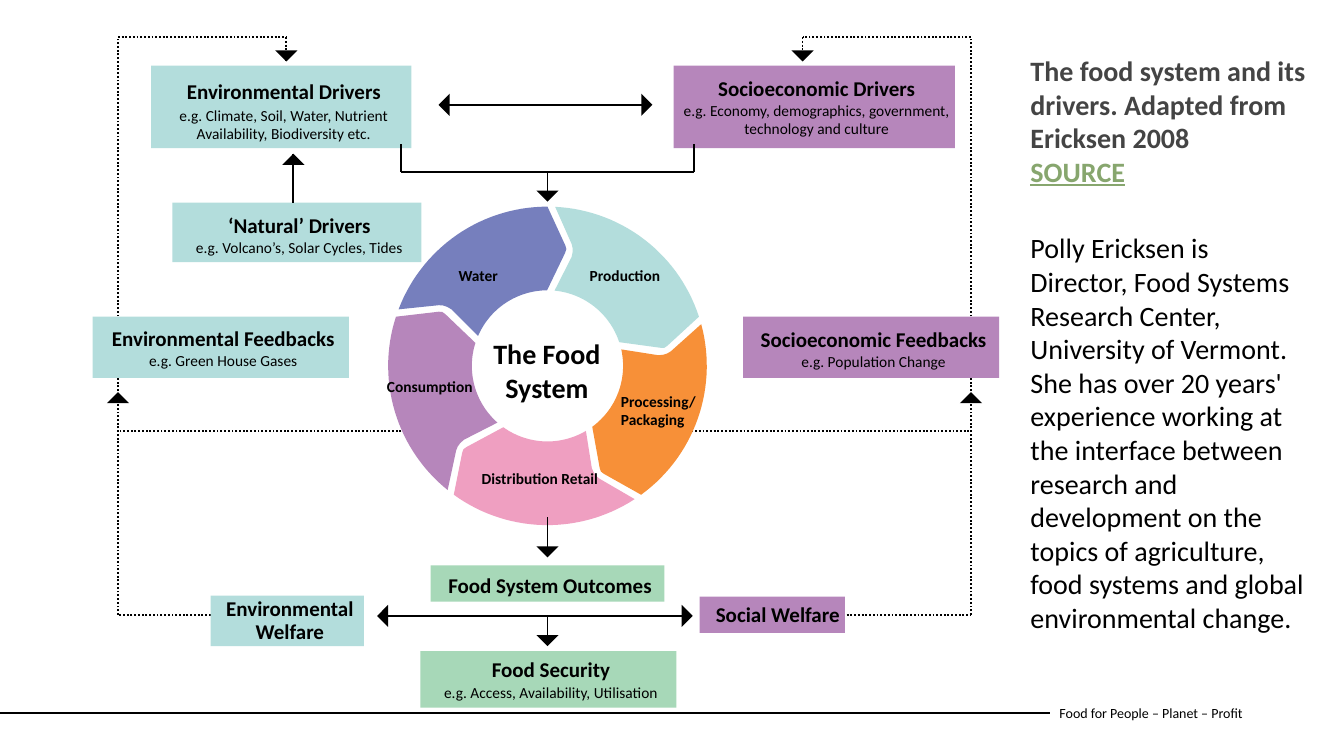
from itertools import pairwise
from math import cos, radians, sin

from lxml.etree import SubElement
from pptx import Presentation
from pptx.dml.color import RGBColor
from pptx.enum.dml import MSO_LINE
from pptx.enum.shapes import MSO_CONNECTOR, MSO_SHAPE
from pptx.enum.text import MSO_ANCHOR, MSO_AUTO_SIZE, PP_ALIGN
from pptx.oxml.ns import qn
from pptx.util import Inches, Pt

COLORS = {
    "black": "000000",
    "heading": "444444",
    "source": "87A66E",
    "teal": "B3DDDC",
    "purple": "B686BB",
    "green": "A7D8B8",
    "orange": "F79038",
    "pink": "EF9FC1",
    "blue": "767FBD",
}
WHEEL_X, WHEEL_Y = 5.43, 3.63
OUTER, INNER = 1.58, 0.75
MIRROR = 10.8
TURNS = {"up": 0, "right": 90, "down": 180, "left": 270}

DRIVER_BOXES = [
    (1.5, 0.65, 2.58, 0.82, "teal", 0.13, "Environmental Drivers",
     "e.g. Climate, Soil, Water, Nutrient Availability, Biodiversity etc.", 1.5),
    (6.68, 0.65, 2.79, 0.82, "purple", 0.1, "Socioeconomic Drivers",
     "e.g. Economy, demographics, government, technology and culture", 0),
    (1.71, 2.01, 2.47, 0.59, "teal", 0.1, "‘Natural’ Drivers",
     "e.g. Volcano’s, Solar Cycles, Tides", 0),
    (0.92, 3.14, 2.54, 0.61, "teal", 0.09, "Environmental Feedbacks",
     "e.g. Green House Gases", 0),
    (7.37, 3.14, 2.54, 0.61, "purple", 0.1, "Socioeconomic Feedbacks",
     "e.g. Population Change", 0),
    (4.27, 5.61, 2.32, 0.36, "green", 0.07, "Food System Outcomes", None, 0),
    (4.17, 6.46, 2.54, 0.56, "green", 0.05, "Food Security",
     "e.g. Access, Availability, Utilisation", 1),
]
WHEEL_LABELS = [
    (5.75, 2.59, 0.91, 0.29, ["Production"]),
    (6.06, 3.84, 0.95, 0.66, ["Processing/", "Packaging"]),
    (4.68, 4.61, 1.37, 0.47, ["Distribution Retail"]),
    (3.74, 3.69, 1.06, 0.29, ["Consumption"]),
    (4.45, 2.59, 0.6, 0.29, ["Water"]),
]


def rgb(name):
    return RGBColor.from_string(COLORS[name])


def write(frame, text, size=15, bold=False, underline=False, color="black",
          align=PP_ALIGN.LEFT, before=0, spacing=None):
    paragraph = frame.add_paragraph() if frame.text else frame.paragraphs[0]
    paragraph.alignment = align
    paragraph.space_before = Pt(before)
    paragraph.line_spacing = spacing
    run = paragraph.add_run()
    run.text = text
    font = run.font
    font.name, font.size = "Calibri", Pt(size)
    font.bold, font.underline = bold, underline
    font.color.rgb = rgb(color)
    return paragraph


def paint(shape, color):
    shape.shadow.inherit = False
    shape.fill.solid()
    shape.fill.fore_color.rgb = rgb(color)
    shape.line.fill.background()


def box(slide, left, top, width, height, color, inset_top, inset_left=0.05):
    panel = slide.shapes.add_shape(
        MSO_SHAPE.RECTANGLE, Inches(left), Inches(top), Inches(width), Inches(height))
    paint(panel, color)
    frame = panel.text_frame
    frame.word_wrap = True
    frame.vertical_anchor = MSO_ANCHOR.TOP
    frame.margin_left, frame.margin_right = Inches(inset_left), 0
    frame.margin_top, frame.margin_bottom = Inches(inset_top), 0
    return frame


def label(slide, left, top, width, height, lines, **style):
    frame = slide.shapes.add_textbox(
        Inches(left), Inches(top), Inches(width), Inches(height)).text_frame
    frame.word_wrap = False
    for line in lines:
        write(frame, line, **style)
    return frame


def route(slide, *points, dotted=False, weight=1.32):
    for start, end in pairwise(points):
        stroke = slide.shapes.add_connector(
            MSO_CONNECTOR.STRAIGHT, *(Inches(v) for v in start + end))
        stroke.line.color.rgb = rgb("black")
        stroke.line.width = Pt(weight)
        if dotted:
            stroke.line.dash_style = MSO_LINE.ROUND_DOT
        SubElement(stroke._element.spPr, qn("a:effectLst"))


def arrowhead(slide, x, y, direction):
    head = slide.shapes.add_shape(
        MSO_SHAPE.ISOSCELES_TRIANGLE, Inches(x - 0.11), Inches(y - 0.055),
        Inches(0.22), Inches(0.11))
    head.rotation = TURNS[direction]
    paint(head, "black")


def arc(radius, start, end, steps=30):
    angles = [radians(start + (end - start) * i / steps) for i in range(steps + 1)]
    return [(radius * sin(a), -radius * cos(a)) for a in angles]


def segment(slide, index, color):
    notch = [(0.24, -1.21), (0.25, -1.17), (0.25, -1.13), (0.24, -1.08)]
    tip = [(1.12, -0.18), (1.16, -0.18), (1.19, -0.2)]
    outline = notch + arc(INNER, 5.4, 71.7) + tip + arc(OUTER, 72, 2.8)
    turn = radians(72 * index)
    points = [
        (Inches(WHEEL_X + x * cos(turn) - y * sin(turn)),
         Inches(WHEEL_Y + x * sin(turn) + y * cos(turn)))
        for x, y in outline]
    builder = slide.shapes.build_freeform(*points[0])
    builder.add_line_segments(points[1:], close=True)
    paint(builder.convert_to_shape(), color)


def feedback_loops(slide):
    for side, welfare_edge in ((lambda x: x, 2.09), (lambda x: MIRROR - x, 8.25)):
        outer, driver = side(1.17), side(2.84)
        route(slide, (welfare_edge, 6.1), (outer, 6.1), (outer, 0.37),
              (driver, 0.37), (driver, 0.6), dotted=True)
        route(slide, (side(3.98), 4.28), (outer, 4.28), dotted=True)
        arrowhead(slide, outer, 3.945, "up")
        arrowhead(slide, driver, 0.555, "down")


def wheel(slide):
    for index, color in enumerate(("teal", "orange", "pink", "purple", "blue")):
        segment(slide, index, color)
    label(slide, 4.79, 3.29, 1.27, 1.11, ["The Food", "System"],
          size=20, bold=True, align=PP_ALIGN.CENTER)
    for left, top, width, height, lines in WHEEL_LABELS:
        label(slide, left, top, width, height, lines, size=11, bold=True)


def boxes(slide):
    for *panel, heading, example, gap in DRIVER_BOXES:
        frame = box(slide, *panel)
        write(frame, heading, bold=True, align=PP_ALIGN.CENTER)
        if example:
            write(frame, example, size=11, align=PP_ALIGN.CENTER, before=gap)
    environment = box(slide, 2.09, 5.91, 1.52, 0.5, "teal", 0.03)
    write(environment, "Environmental Welfare", bold=True,
          align=PP_ALIGN.CENTER, spacing=Pt(16))
    social = box(slide, 6.94, 5.92, 1.44, 0.36, "purple", 0.05, inset_left=0.16)
    social.word_wrap = False
    write(social, "Social Welfare", bold=True)


def arrows(slide):
    for start, tip in ((1.71, 2), (5.13, 5.53), (6.11, 6.41)):
        route(slide, (WHEEL_X, start), (WHEEL_X, tip - 0.01))
        arrowhead(slide, WHEEL_X, tip - 0.055, "down")
    for left, right, y in ((4.35, 6.47, 1.04), (3.74, 6.87, 6.11)):
        route(slide, (left + 0.1, y), (right - 0.1, y))
        arrowhead(slide, left + 0.055, y, "left")
        arrowhead(slide, right - 0.055, y, "right")
    route(slide, (3.98, 1.43), (3.98, 1.71), (6.88, 1.71), (6.88, 1.43))
    route(slide, (2.91, 2.01), (2.91, 1.53))
    arrowhead(slide, 2.91, 1.58, "up")


def place(placeholder, top, height):
    placeholder.left, placeholder.top = Inches(10.12), Inches(top)
    placeholder.width, placeholder.height = Inches(2.97), Inches(height)
    frame = placeholder.text_frame
    frame.vertical_anchor = MSO_ANCHOR.TOP
    frame.auto_size = MSO_AUTO_SIZE.NONE
    frame.word_wrap = True
    return frame


def commentary(slide):
    heading = place(slide.shapes.title, 0.48, 1.5)
    write(heading, "The food system and its drivers. Adapted from Ericksen 2008",
          size=20, bold=True, color="heading")
    write(heading, "SOURCE", size=20, bold=True, underline=True, color="source")
    biography = write(
        place(slide.placeholders[1], 2.24, 4.13),
        "Polly Ericksen is Director, Food Systems Research Center, University of "
        "Vermont. She has over 20 years' experience working at the interface between "
        "research and development on the topics of agriculture, food systems and "
        "global environmental change.", size=20)
    properties = biography._p.get_or_add_pPr()
    properties.set("marL", "0")
    properties.set("indent", "0")
    SubElement(properties, qn("a:buNone"))


def main():
    presentation = Presentation()
    presentation.slide_width, presentation.slide_height = Inches(13.33), Inches(7.5)
    slide = presentation.slides.add_slide(presentation.slide_layouts[1])
    commentary(slide)
    footer = label(slide, 10.41, 6.87, 2.73, 0.4,
                   ["Food for People – Planet – Profit"], size=10)
    footer.vertical_anchor = MSO_ANCHOR.MIDDLE
    route(slide, (0, 7.07), (10.41, 7.07), weight=1.5)
    feedback_loops(slide)
    wheel(slide)
    boxes(slide)
    arrows(slide)
    presentation.save("out.pptx")


if __name__ == "__main__":
    main()
